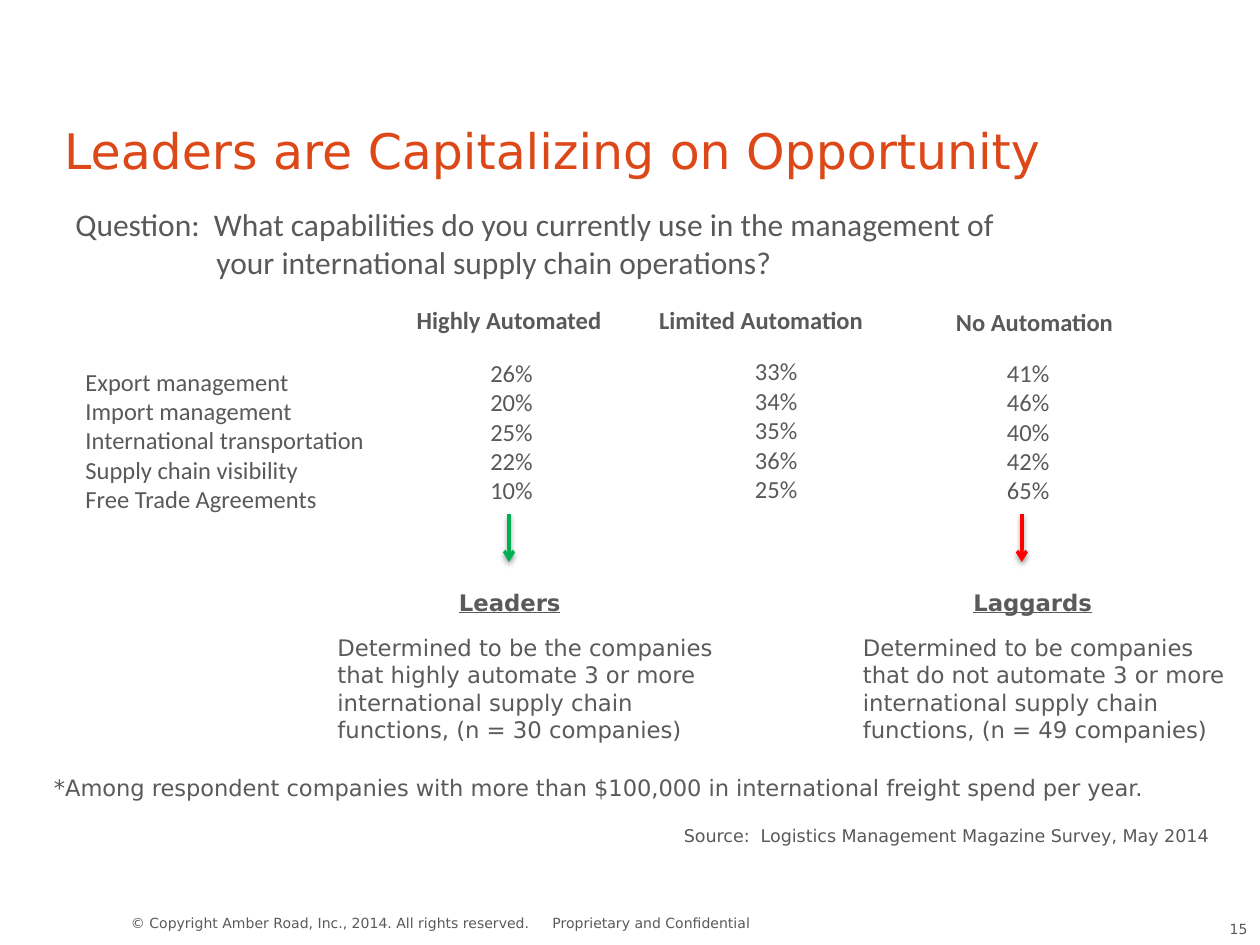
import pptx
import pptx.util
import pptx.dml.color
import pptx.enum.shapes
import pptx.enum.text
from lxml import etree

Inches = pptx.util.Inches
ALIGN = pptx.enum.text.PP_ALIGN
ANCHOR = pptx.enum.text.MSO_ANCHOR
COLORS = {"title": "DD4819", "body": "595959", "note": "5A595C",
          "leaders": "00B050", "laggards": "FF0000", "shadow": "000000"}
SANS, CALIBRI = "DejaVu Sans", "Calibri"
DRAWING_NS = "http://schemas.openxmlformats.org/drawingml/2006/main"

TITLE = {"name": SANS, "size": 28, "color": "title"}
QUESTION = {"name": CALIBRI, "size": 18, "color": "body"}
FIGURE = {"name": CALIBRI, "size": 14, "color": "body"}
COLUMN_HEAD = {**FIGURE, "bold": True}
DEFINITION = {"name": SANS, "size": 13, "color": "note"}
GROUP_HEAD = {**DEFINITION, "bold": True, "underline": True}
FOOTNOTE = {**DEFINITION, "size": 12.9}
SOURCE = {"name": SANS, "size": 10, "color": "body"}
FOOTER = {"name": SANS, "size": 8, "color": "note"}

CAPABILITIES = ["Export management", "Import management",
                "International transportation", "Supply chain visibility",
                "Free Trade Agreements"]
# heading, heading left, heading top, values left, values top, values
AUTOMATION_LEVELS = [
    ("Highly Automated", 2.5, 2.37, 3.79, 2.79, [26, 20, 25, 22, 10]),
    ("Limited Automation", 4.5, 2.37, 5.89, 2.78, [33, 34, 35, 36, 25]),
    ("No Automation", 6.67, 2.39, 7.89, 2.79, [41, 46, 40, 42, 65]),
]


def format_paragraph(paragraph, style, align):
    paragraph.alignment = align
    for attribute, value in style.items():
        if attribute == "color":
            paragraph.font.color.rgb = pptx.dml.color.RGBColor.from_string(COLORS[value])
        elif attribute == "size":
            paragraph.font.size = pptx.util.Pt(value)
        else:
            setattr(paragraph.font, attribute, value)


def add_text(slide, box, lines, style, align=ALIGN.LEFT, wrap=True):
    """Place one paragraph per line in box (left, top, width, height in inches)."""
    frame = slide.shapes.add_textbox(*map(Inches, box)).text_frame
    frame.word_wrap = wrap
    frame.text = "\n".join(lines)
    for paragraph in frame.paragraphs:
        format_paragraph(paragraph, style, align)
    return frame


def add_title(slide, box, wording):
    title = slide.shapes.title
    title.left, title.top, title.width, title.height = map(Inches, box)
    frame = title.text_frame
    frame.text = wording
    frame.vertical_anchor = ANCHOR.MIDDLE
    frame.margin_bottom = 0
    format_paragraph(frame.paragraphs[0], TITLE, ALIGN.LEFT)


def add_question(slide, box, wording):
    frame = add_text(slide, box, [wording], QUESTION)
    hanging = Inches(1.12)
    properties = frame.paragraphs[0]._p.get_or_add_pPr()
    properties.set("marL", str(hanging))
    properties.set("indent", str(-hanging))


def add_survey(slide, box):
    left, top, width, height = box
    add_text(slide, (left, top + 0.49, 2.44, 1.52), CAPABILITIES, FIGURE)
    for heading, head_left, head_top, values_left, values_top, values in AUTOMATION_LEVELS:
        add_text(slide, (head_left, head_top, 3.08, 0.34), [heading],
                 COLUMN_HEAD, ALIGN.CENTER)
        add_text(slide, (values_left, values_top, 0.54, 1.28),
                 [f"{value}%" for value in values], FIGURE, ALIGN.CENTER, wrap=False)


def add_arrow(slide, x, top, bottom, color):
    arrow = slide.shapes.add_connector(
        pptx.enum.shapes.MSO_CONNECTOR.STRAIGHT,
        Inches(x), Inches(top), Inches(x), Inches(bottom))
    arrow.line.width = pptx.util.Pt(2)
    arrow.line.color.rgb = pptx.dml.color.RGBColor.from_string(COLORS[color])
    etree.SubElement(arrow.line._get_or_add_ln(), f"{{{DRAWING_NS}}}tailEnd", type="arrow")
    effects = etree.SubElement(arrow._element.spPr, f"{{{DRAWING_NS}}}effectLst")
    shadow = etree.SubElement(
        effects, f"{{{DRAWING_NS}}}outerShdw", blurRad=str(pptx.util.Pt(3.1)),
        dist=str(pptx.util.Pt(1.6)), dir="5400000", rotWithShape="0")
    tint = etree.SubElement(shadow, f"{{{DRAWING_NS}}}srgbClr", val=COLORS["shadow"])
    etree.SubElement(tint, f"{{{DRAWING_NS}}}alpha", val="38000")


def add_group_definition(slide, box, heading, definition, color, head_offset, arrow_offset):
    """Stack an arrow, a heading and a definition within box."""
    left, top, width, height = box
    add_arrow(slide, left + arrow_offset, top, top + 0.38, color)
    add_text(slide, (left + head_offset, top + 0.54, 1.25, 0.32), [heading],
             GROUP_HEAD, ALIGN.CENTER)
    add_text(slide, (left, top + 0.9, width, height - 0.9), [definition], DEFINITION)


def add_footer(slide, box):
    left, top, width, height = box
    add_text(slide, (left, top, 3.58, 0.23),
             ["© Copyright Amber Road, Inc., 2014. All rights reserved."], FOOTER)
    confidential = add_text(slide, (left + 2.38, top + 0.05, 3.7, 0.23),
                            ["Proprietary and Confidential"], FOOTER, ALIGN.CENTER)
    confidential.margin_top = confidential.margin_bottom = 0
    add_text(slide, (left + width - 0.47, top + 0.05, 0.47, 0.24), ["15"],
             FOOTER, ALIGN.RIGHT)


def main():
    presentation = pptx.Presentation()
    presentation.slide_width, presentation.slide_height = Inches(10), Inches(7.5)
    slide = presentation.slides.add_slide(presentation.slide_layouts[5])

    add_title(slide, (0.41, 0.75, 9.17, 0.83), "Leaders are Capitalizing on Opportunity")
    add_question(slide, (0.5, 1.58, 8, 0.71),
                 "Question:  What capabilities do you currently use in the management of "
                 "your international supply chain operations?")
    add_survey(slide, (0.58, 2.37, 9.17, 2.01))
    add_group_definition(
        slide, (2.58, 4.08, 3.33, 1.88), "Leaders",
        "Determined to be the companies that highly automate 3 or more "
        "international supply chain functions, (n = 30 companies)",
        "leaders", head_offset=0.84, arrow_offset=1.46)
    add_group_definition(
        slide, (6.75, 4.08, 3.08, 1.88), "Laggards",
        "Determined to be companies that do not automate 3 or more "
        "international supply chain functions, (n = 49 companies)",
        "laggards", head_offset=0.82, arrow_offset=1.36)
    add_text(slide, (0.33, 6.09, 9.42, 0.41),
             ["*Among respondent companies with more than $100,000 in "
              "international freight spend per year."], FOOTNOTE)
    add_text(slide, (5.33, 6.5, 4.46, 0.27),
             ["Source:  Logistics Management Magazine Survey, May 2014"], SOURCE)
    add_footer(slide, (0.94, 7.21, 9.06, 0.29))
    presentation.save("out.pptx")


if __name__ == "__main__":
    main()
